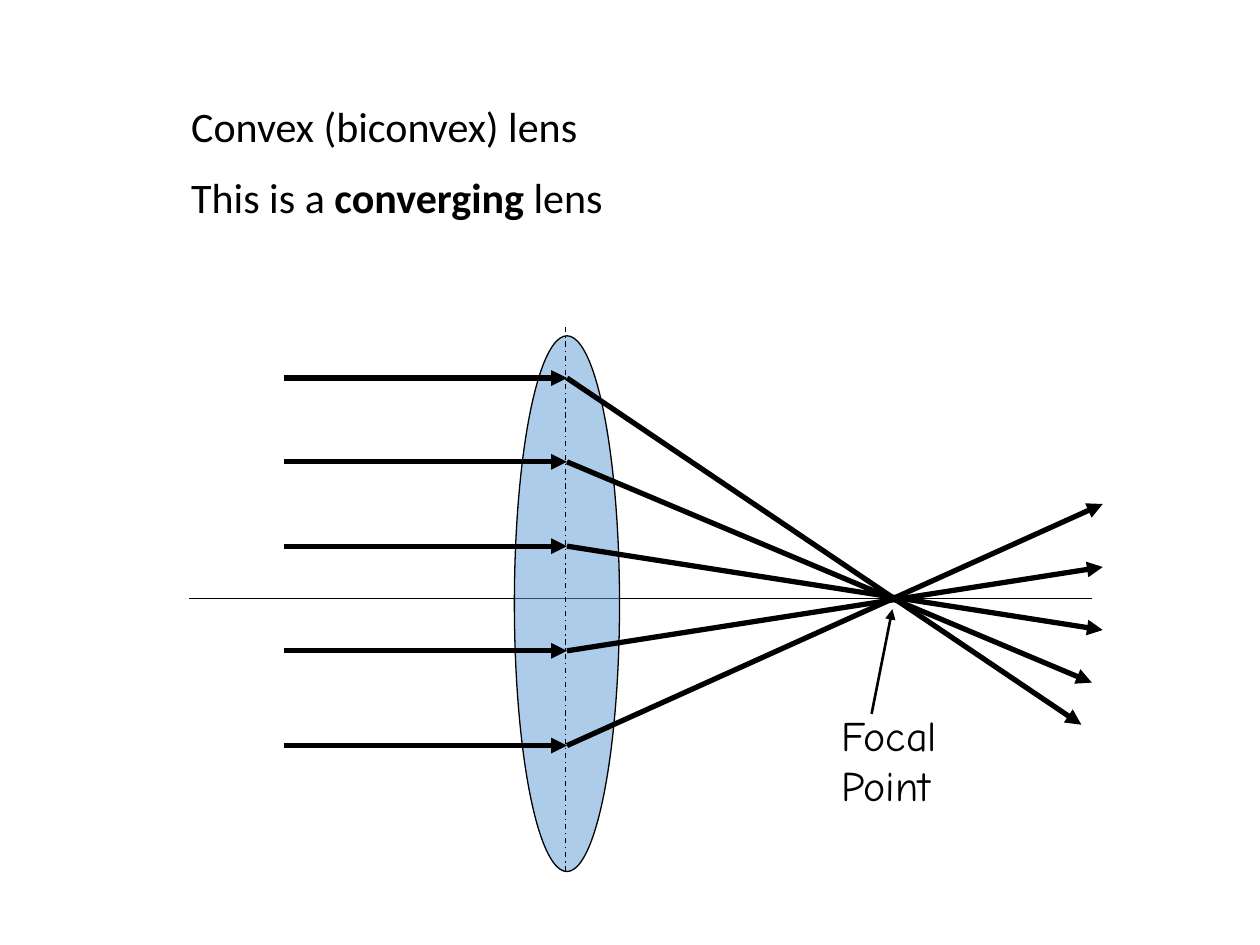
from lxml import etree
from pptx import Presentation
from pptx import util as u
from pptx.dml.color import RGBColor
from pptx.enum import dml, shapes, text
from pptx.oxml import ns

Cm, Pt = u.Cm, u.Pt
HUES = {"ink": "000000", "lens": "5B9BD5"}
START, MID = 5.72, 11.43
RAYS = [
    (7.62, 21.8, 14.61),
    (9.31, 22.01, 13.76),
    (11.01, 22.23, 12.7),
    (13.12, 22.23, 11.43),
    (15.03, 22.23, 10.16),
]


def hue(name):
    return RGBColor.from_string(HUES[name])


def add_sub(node, tag, **attrs):
    return etree.SubElement(node, ns.qn(tag), **attrs)


def place(shape, left, top, width, height):
    shape.left, shape.top = Cm(left), Cm(top)
    shape.width, shape.height = Cm(width), Cm(height)


def style_runs(para, font):
    for run in para.runs:
        run.font.name = font
        run.font.size = Pt(24)
        run.font.color.rgb = hue("ink")


def add_line(slide, x1, y1, x2, y2, width, arrow=False, dash=None):
    line = slide.shapes.add_connector(
        shapes.MSO_CONNECTOR.STRAIGHT, Cm(x1), Cm(y1), Cm(x2), Cm(y2))
    line.line.color.rgb = hue("ink")
    line.line.width = Pt(width)
    if dash:
        line.line.dash_style = dash
    if arrow:
        add_sub(line.line._get_or_add_ln(), "a:tailEnd", type="triangle")
    add_sub(line._element.spPr, "a:effectLst")


def add_lens(slide):
    lens = slide.shapes.add_shape(
        shapes.MSO_SHAPE.OVAL, Cm(10.37), Cm(6.77), Cm(2.12), Cm(10.8))
    lens.shadow.inherit = False
    lens.fill.solid()
    lens.fill.fore_color.rgb = hue("lens")
    tint = lens._element.spPr.find(".//" + ns.qn("a:srgbClr"))
    add_sub(tint, "a:alpha", val="50000")
    lens.line.color.rgb = hue("ink")
    lens.line.width = Pt(0.75)


def add_intro(slide):
    title = slide.shapes.title
    title._element.getparent().remove(title._element)
    body = slide.placeholders[1]
    place(body, 3.6, 1.9, 18.2, 5.26)
    frame = body.text_frame
    frame.auto_size = text.MSO_AUTO_SIZE.NONE
    frame.text = "Convex (biconvex) lens"
    last = frame.add_paragraph()
    for part in ("This is a ", "converging", " lens"):
        run = last.add_run()
        run.text = part
        run.font.bold = part == "converging"
    for para in frame.paragraphs:
        para.space_before = Pt(12)
        style_runs(para, "Calibri")
        props = para._p.get_or_add_pPr()
        props.set("marL", "0")
        props.set("indent", "0")
        add_sub(props, "a:buNone")


def add_label(slide):
    box = slide.shapes.add_textbox(Cm(16.72), Cm(14.18), Cm(2.57), Cm(2.62))
    frame = box.text_frame
    frame.word_wrap = False
    frame.text = "Focal\nPoint"
    for para in frame.paragraphs:
        style_runs(para, "Comic Neue")


def main():
    deck = Presentation()
    deck.slide_width, deck.slide_height = Cm(25.4), Cm(19.05)
    slide = deck.slides.add_slide(deck.slide_layouts[1])
    add_intro(slide)
    add_line(slide, 3.81, 12.07, 22.01, 12.07, 0.75)
    add_lens(slide)
    for top, right, end in RAYS:
        add_line(slide, START, top, MID, top, 3, arrow=True)
        add_line(slide, MID, top, right, end, 3, arrow=True)
    add_label(slide)
    add_line(slide, 17.57, 14.39, 17.99, 12.28, 1.5, arrow=True)
    add_line(slide, 11.4, 17.57, 11.4, 6.56, 0.75,
             dash=dml.MSO_LINE.DASH_DOT)
    deck.save("out.pptx")


if __name__ == "__main__":
    main()
